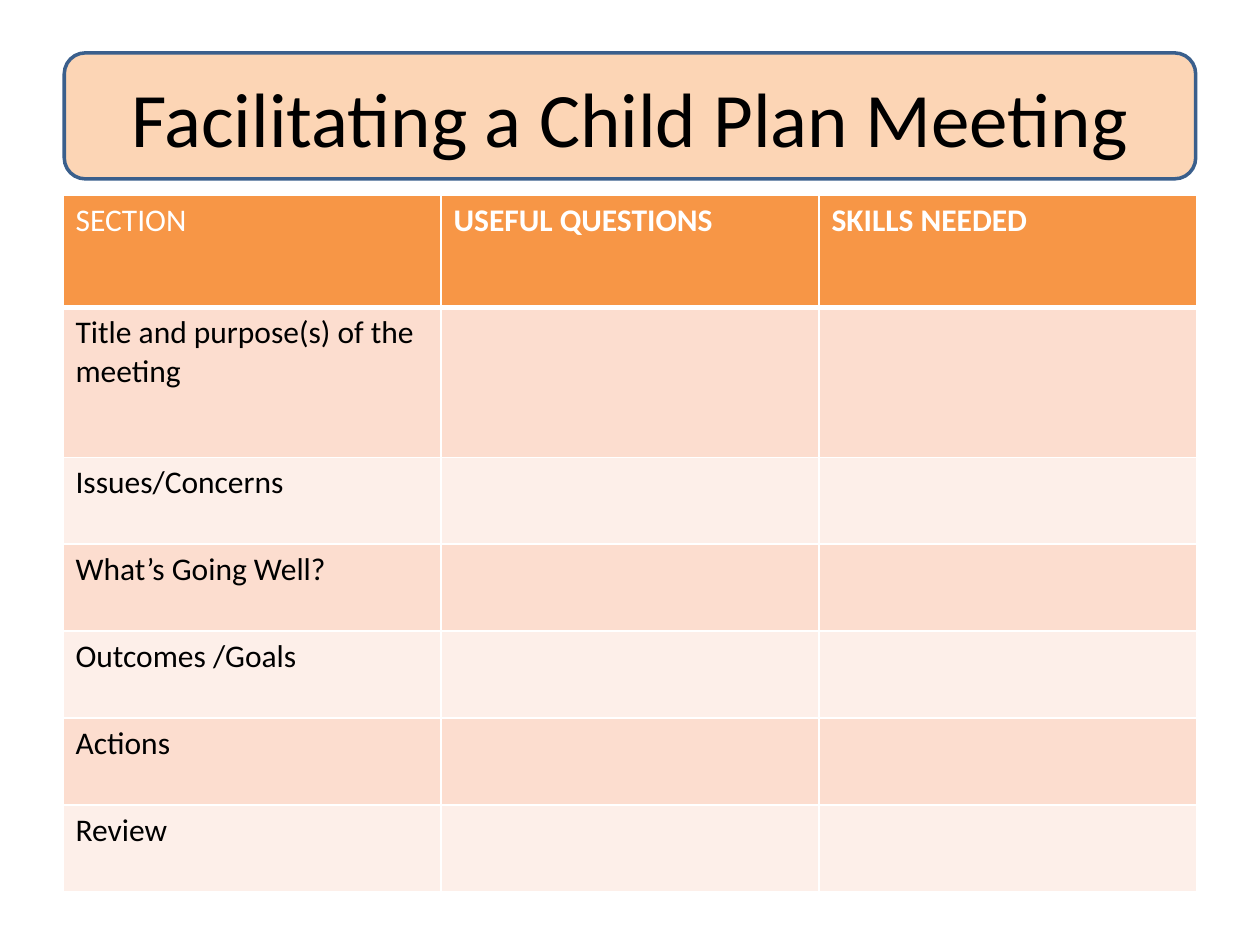
from dataclasses import dataclass

from lxml.etree import SubElement
from pptx import Presentation
from pptx.dml.color import RGBColor
from pptx.enum.shapes import MSO_SHAPE as Shape
from pptx.enum.text import MSO_ANCHOR as Anchor, PP_ALIGN as Align
from pptx.oxml.ns import qn
from pptx.util import Inches, Pt


@dataclass(frozen=True)
class Theme:
    font: str = "Calibri"
    title_size: int = 44
    table_size: int = 18
    ink: str = "000000"
    white: str = "FFFFFF"
    banner: str = "FCD5B5"
    banner_line: str = "3A5F8C"
    header: str = "F79646"
    bands: tuple = ("FCDDCF", "FDEFE9")
    rule: int = 1
    header_rule: int = 3


THEME = Theme()
TITLE = "Facilitating a Child Plan Meeting"
HEADINGS = ("SECTION", "USEFUL QUESTIONS", "SKILLS NEEDED")
SECTIONS = (
    "Title and purpose(s) of the meeting",
    "Issues/Concerns",
    "What’s Going Well?",
    "Outcomes /Goals",
    "Actions",
    "Review",
)
ROW_HEIGHTS = (0.89, 1.19) + (0.69,) * (len(SECTIONS) - 1)


def color(value):
    return RGBColor.from_string(value)


def write(frame, text, size, ink, bold=False):
    frame.text = text
    para = frame.paragraphs[0]
    font = para.font if not para.runs else para.runs[0].font
    font.name, font.size, font.bold = THEME.font, Pt(size), bold
    font.color.rgb = color(ink)
    return para


def draw_rules(cell, **widths):
    """Draw the cell's white borders; widths are points by side: L, R, T, B."""
    properties = cell._tc.get_or_add_tcPr()
    for side, width in widths.items():
        line = SubElement(properties, qn(f"a:ln{side}"), w=str(Pt(width)))
        SubElement(SubElement(line, qn("a:solidFill")), qn("a:srgbClr"), val=THEME.white)


def add_banner(page, left, top, width, height):
    inset_x, inset_top = Inches(0.01), Inches(0.12)
    panel = page.shapes.add_shape(
        Shape.ROUNDED_RECTANGLE, left + inset_x, top + inset_top,
        width - 2 * inset_x, Inches(1))
    panel.shadow.inherit = False
    panel.fill.solid()
    panel.fill.fore_color.rgb = color(THEME.banner)
    panel.line.color.rgb = color(THEME.banner_line)
    panel.line.width = Pt(2)

    box = page.shapes.add_textbox(left, top, width, height)
    frame = box.text_frame
    frame.word_wrap = True
    frame.vertical_anchor = Anchor.MIDDLE
    write(frame, TITLE, THEME.title_size, THEME.ink).alignment = Align.CENTER


def add_section_table(page, left, top, width, height):
    rows = [HEADINGS] + [(section, "", "") for section in SECTIONS]
    table = page.shapes.add_table(
        len(rows), len(HEADINGS), left, top, width, height).table
    table.horz_banding = False
    for column in table.columns:
        column.width = width // len(HEADINGS)
    for r, (texts, share) in enumerate(zip(rows, ROW_HEIGHTS)):
        table.rows[r].height = int(height * share / sum(ROW_HEIGHTS))
        is_header = r == 0
        fill = THEME.header if is_header else THEME.bands[(r - 1) % 2]
        ink = THEME.white if is_header else THEME.ink
        above = THEME.header_rule if r == 1 else THEME.rule
        below = THEME.header_rule if is_header else THEME.rule
        for c, text in enumerate(texts):
            cell = table.cell(r, c)
            draw_rules(cell, L=THEME.rule, R=THEME.rule, T=above, B=below)
            cell.fill.solid()
            cell.fill.fore_color.rgb = color(fill)
            write(cell.text_frame, text, THEME.table_size, ink,
                  bold=is_header and c > 0)


def main():
    deck = Presentation()
    deck.slide_width, deck.slide_height = Inches(10), Inches(7.5)
    page = deck.slides.add_slide(deck.slide_layouts[6])
    margin = int(deck.slide_width * 0.05)
    width = deck.slide_width - 2 * margin
    banner_top, banner_height = int(deck.slide_height * 0.04), Inches(1.25)
    add_banner(page, margin, banner_top, width, banner_height)
    add_section_table(page, margin, banner_top + banner_height, width,
                      Inches(sum(ROW_HEIGHTS)))
    deck.save("out.pptx")


if __name__ == "__main__":
    main()
